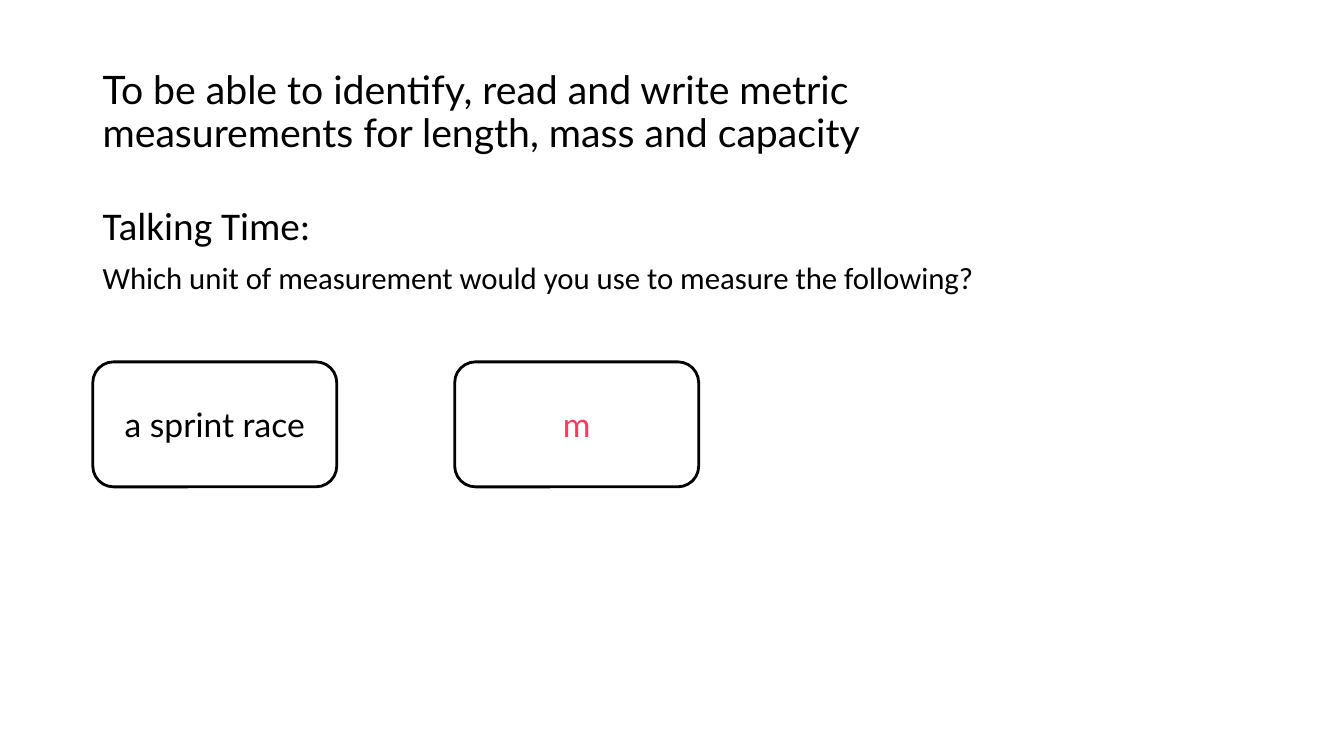
from pptx import Presentation
from pptx.dml.color import RGBColor
from pptx.enum.shapes import MSO_SHAPE
from pptx.enum.text import MSO_ANCHOR, PP_ALIGN
from pptx.util import Inches, Pt

ROUNDED = MSO_SHAPE.ROUNDED_RECTANGLE
MIDDLE, TOP = MSO_ANCHOR.MIDDLE, MSO_ANCHOR.TOP
CENTER = PP_ALIGN.CENTER
COLORS = {"black": "000000", "white": "FFFFFF", "answer": "FF3860"}


def color(name):
    return RGBColor.from_string(COLORS[name])


def style(p, font, size, name="black"):
    f = p.runs[0].font
    f.name, f.size = font, Pt(size)
    f.color.rgb = color(name)


prs = Presentation()
prs.slide_width, prs.slide_height = Inches(13.33), Inches(7.5)
s = prs.slides.add_slide(prs.slide_layouts[6])

title = "To be able to identify, read and write metric measurements for length, mass and capacity"
question = "Which unit of measurement would you use to measure the following?"
text_boxes = [
    (0.4, 9.6, 1.45, MIDDLE, "Lato", [(title, 28)]),
    (2, 11.5, 4.76, TOP, "Calibri", [("Talking Time:", 28), (question, 22)]),
]
for top, width, height, anchor, font, lines in text_boxes:
    sp = s.shapes.add_textbox(Inches(0.92), Inches(top), Inches(width), Inches(height))
    tf = sp.text_frame
    tf.word_wrap = True
    tf.vertical_anchor = anchor
    for i, (text, size) in enumerate(lines):
        p = tf.add_paragraph() if i else tf.paragraphs[0]
        p.text = text
        p.line_spacing = 0.9
        if i:
            p.space_before = Pt(10)
        style(p, font, size)

for i, (text, name) in enumerate([("a sprint race", "black"), ("m", "answer")]):
    sp = s.shapes.add_shape(ROUNDED, Inches(0.92 + i * 3.59), Inches(3.59), Inches(2.42), Inches(1.24))
    sp.shadow.inherit = False
    sp.fill.solid()
    sp.fill.fore_color.rgb = color("white")
    sp.line.color.rgb = color("black")
    sp.line.width = Pt(2)
    tf = sp.text_frame
    tf.word_wrap = True
    tf.vertical_anchor = MIDDLE
    p = tf.paragraphs[0]
    p.text = text
    p.alignment = CENTER
    style(p, "Lato", 24, name)

prs.save("out.pptx")
